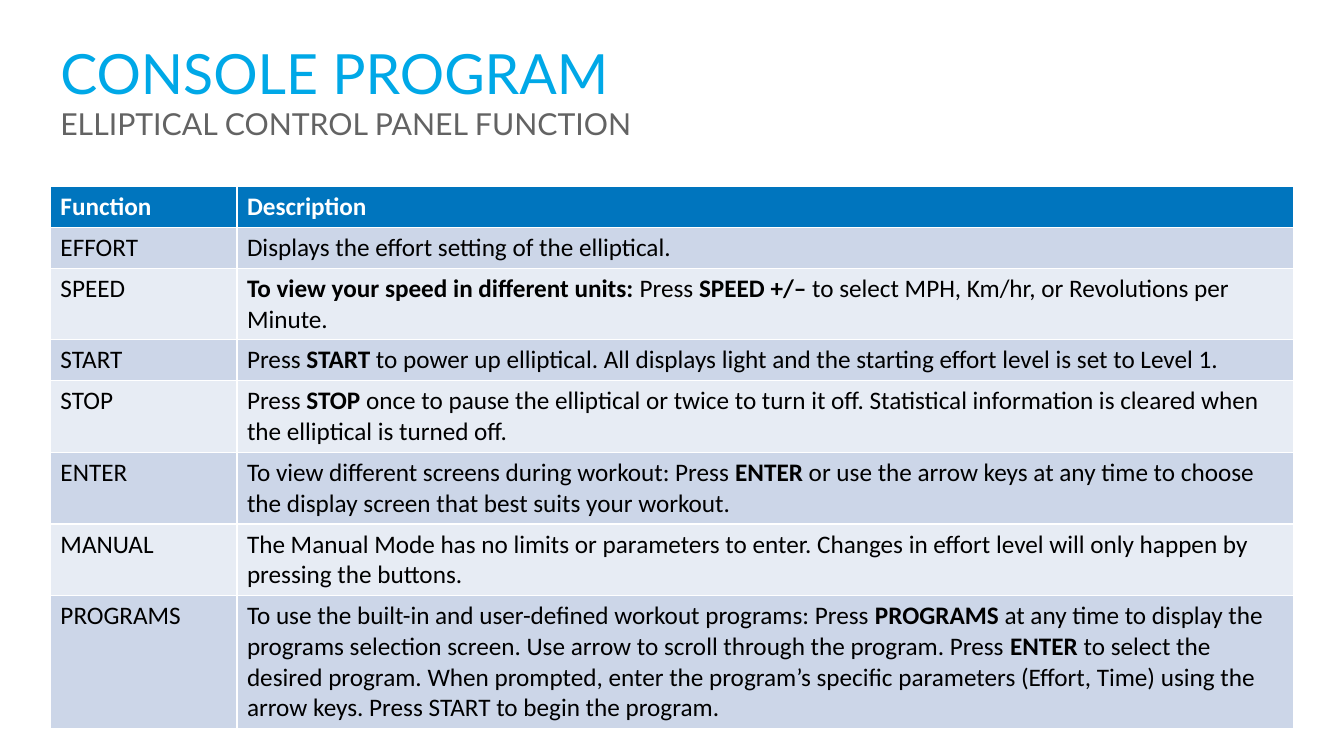
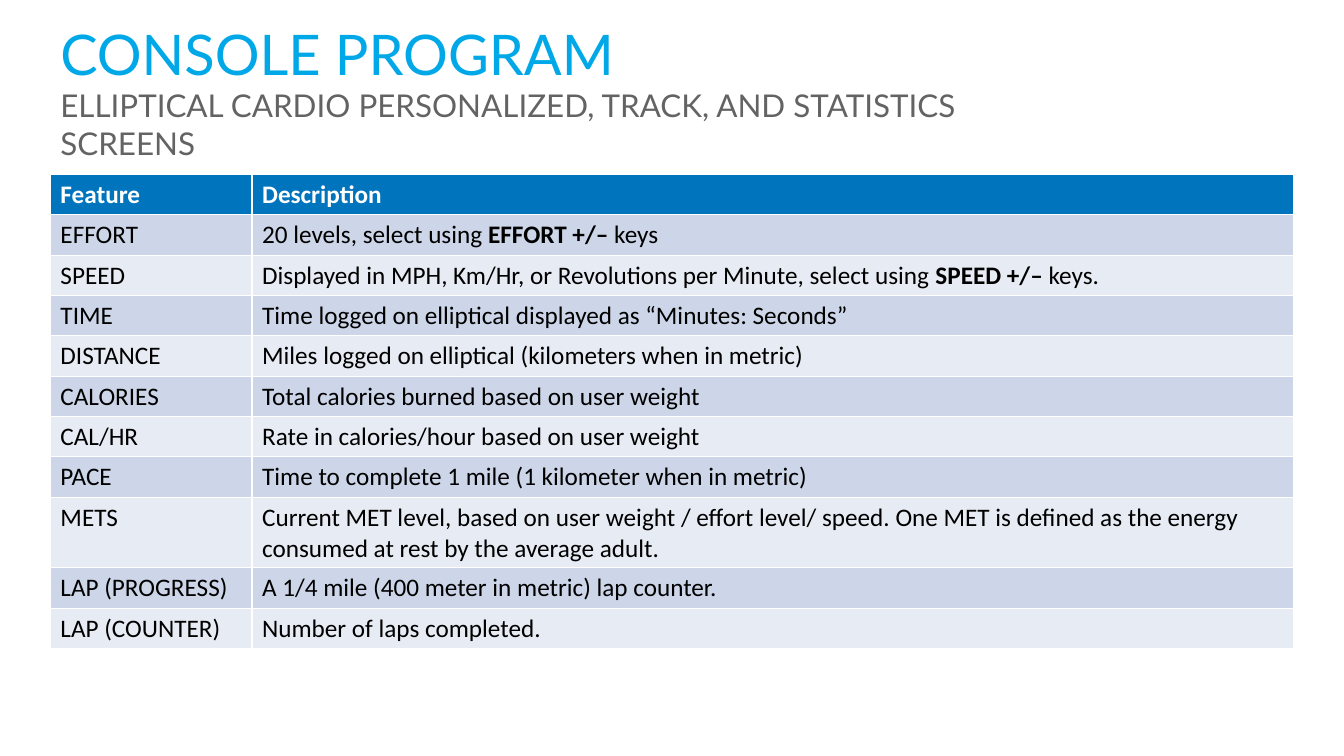
from pptx import Presentation
from pptx.dml.color import RGBColor
from pptx.enum.text import MSO_ANCHOR
from pptx.util import Inches, Pt

MIDDLE = MSO_ANCHOR.MIDDLE

TITLE_FONT, TABLE_FONT = "Lato", "Calibri"
CYAN, GRAY, BLUE = "00A8E7", "636363", "0075BE"
WHITE, BLACK = "FFFFFF", "000000"
BANDS = ["CCD6E8", "E7ECF4"]
LEFT, TABLE_WIDTH, ROW_HEIGHT = 0.5, 12.33, 0.4
BOLD_MARK = "**"

SLIDES = [
    {
        "title": "CONSOLE PROGRAM",
        "subtitle": "ELLIPTICAL CONTROL PANEL FUNCTION",
        "sizes": (39.6, 21.6),
        "title_width": 9.4,
        "table_top": 1.85,
        "label_width": 1.85,
        "rows": [
            ("Function", "Description"),
            ("EFFORT", "Displays the effort setting of the elliptical."),
            ("SPEED", "**To view your speed in different units: **Press **SPEED +/– **"
                      "to select MPH, Km/hr, or Revolutions per Minute."),
            ("START", "Press **START** to power up elliptical. All displays light and "
                      "the starting effort level is set to Level 1."),
            ("STOP", "Press **STOP** once to pause the elliptical or twice to turn it off. "
                     "Statistical information is cleared when the elliptical is turned off."),
            ("ENTER", "To view different screens during workout: Press **ENTER** or use the "
                      "arrow keys at any time to choose the display screen that best suits "
                      "your workout."),
            ("MANUAL", "The Manual Mode has no limits or parameters to enter. Changes in "
                       "effort level will only happen by pressing the buttons."),
            ("PROGRAMS", "To use the built-in and user-defined workout programs: Press "
                         "**PROGRAMS** at any time to display the programs selection screen. "
                         "Use arrow to scroll through the program. Press **ENTER** to select "
                         "the desired program. When prompted, enter the program’s specific "
                         "parameters (Effort, Time) using the arrow keys. Press START to "
                         "begin the program."),
        ],
    },
    {
        "title": "CONSOLE PROGRAM",
        "subtitle": "ELLIPTICAL CARDIO PERSONALIZED, TRACK, AND STATISTICS SCREENS",
        "sizes": (40, 22.4),
        "title_width": 10.05,
        "table_top": 1.73,
        "label_width": 2.0,
        "rows": [
            ("Feature", "Description"),
            ("EFFORT", "20 levels, select using **EFFORT +/– **keys"),
            ("SPEED", "Displayed in MPH, Km/Hr, or Revolutions per Minute, select using "
                      "**SPEED +/– **keys."),
            ("TIME", "Time logged on elliptical displayed as “Minutes: Seconds”"),
            ("DISTANCE", "Miles logged on elliptical (kilometers when in metric)"),
            ("CALORIES", "Total calories burned based on user weight"),
            ("CAL/HR", "Rate in calories/hour based on user weight"),
            ("PACE", "Time to complete 1 mile (1 kilometer when in metric)"),
            ("METS", "Current MET level, based on user weight / effort level/ speed. One MET "
                     "is defined as the energy consumed at rest by the average adult."),
            ("LAP (PROGRESS)", "A 1/4 mile (400 meter in metric) lap counter."),
            ("LAP (COUNTER)", "Number of laps completed."),
        ],
    },
]


def rgb(value):
    return RGBColor.from_string(value)


def add_run(p, text, font, size, color, bold=False):
    r = p.add_run()
    r.text = text
    r.font.name = font
    r.font.size = Pt(size)
    r.font.color.rgb = rgb(color)
    r.font.bold = bold


def add_title(s, data):
    sp = s.shapes.add_textbox(Inches(LEFT), Inches(0.3),
                              Inches(data["title_width"]), Inches(1.19))
    tf = sp.text_frame
    tf.word_wrap = True
    tf.vertical_anchor = MIDDLE
    p = tf.paragraphs[0]
    title_size, subtitle_size = data["sizes"]
    add_run(p, data["title"], TITLE_FONT, title_size, CYAN)
    p.add_line_break()
    add_run(p, data["subtitle"], TITLE_FONT, subtitle_size, GRAY)


def fill_cell(cell, text, row):
    header = row == 0
    cell.fill.solid()
    cell.fill.fore_color.rgb = rgb(BLUE if header else BANDS[(row - 1) % 2])
    p = cell.text_frame.paragraphs[0]
    for i, part in enumerate(text.split(BOLD_MARK)):
        if part:
            add_run(p, part, TABLE_FONT, 18, WHITE if header else BLACK,
                    header or i % 2 == 1)


def add_table(s, data):
    rows = data["rows"]
    table = s.shapes.add_table(len(rows), 2, Inches(LEFT), Inches(data["table_top"]),
                               Inches(TABLE_WIDTH), Inches(ROW_HEIGHT * len(rows))).table
    table.columns[0].width = Inches(data["label_width"])
    table.columns[1].width = Inches(TABLE_WIDTH - data["label_width"])
    for i, texts in enumerate(rows):
        for j, text in enumerate(texts):
            fill_cell(table.cell(i, j), text, i)


def main():
    prs = Presentation()
    prs.slide_width, prs.slide_height = Inches(13.33), Inches(7.5)
    for data in SLIDES:
        s = prs.slides.add_slide(prs.slide_layouts[6])
        add_table(s, data)
        add_title(s, data)
    prs.save("out.pptx")


if __name__ == "__main__":
    main()
